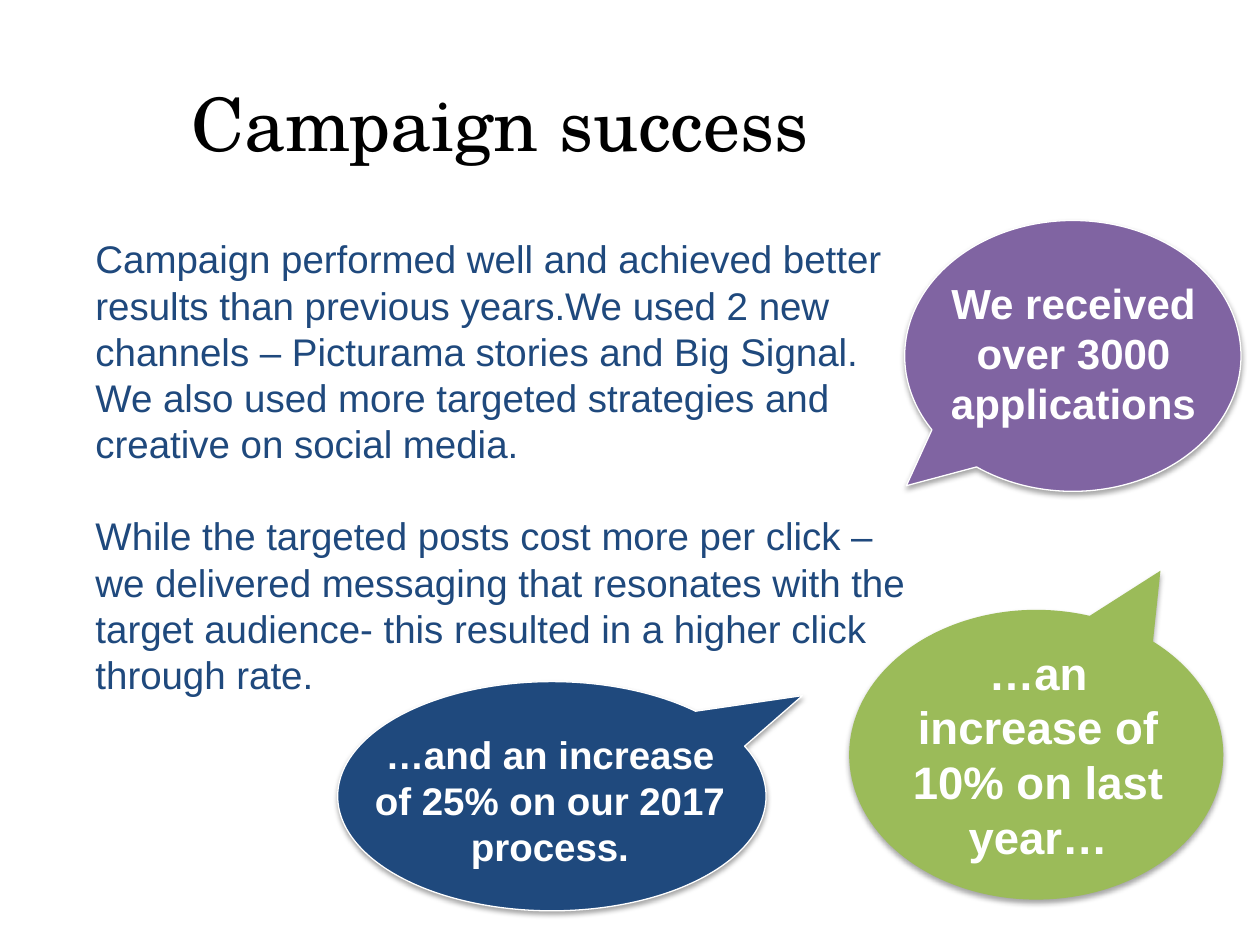
"""Build the campaign success slide."""
from lxml.etree import SubElement
from pptx import Presentation
from pptx.dml.color import RGBColor as RGB
from pptx.enum.shapes import MSO_SHAPE as Shape
from pptx.enum.text import PP_ALIGN as Align
from pptx.oxml.ns import qn
from pptx.util import Pt

NAVY = RGB(0x1F, 0x49, 0x7D)
PURPLE = RGB(0x80, 0x64, 0xA2)
GREEN = RGB(0x9B, 0xBB, 0x59)
WHITE = RGB(255, 255, 255)
BLACK = RGB(0, 0, 0)

TITLE = "Campaign success"
BODY = [
    ("Campaign performed well and achieved better results than previous "
     "years.We used 2 new channels – Picturama stories and Big Signal.", 0),
    ("We also used more targeted strategies and creative on social media.", 0),
    ("While the targeted posts cost more per click –", 26.4),
    ("we delivered messaging that resonates with the target audience- "
     "this resulted in a higher click through rate.", 0),
]
CALLS = [
    dict(box=(517, 126, 192.2, 154.8), tip=(-0.495, 0.479), fill=PURPLE,
         edge=WHITE, area=(528.5, 154.8, 169.9, 94.3), size=24,
         text="We received over 3000 applications"),
    dict(box=(485.3, 348.5, 213.8, 165.6), tip=(0.332, -0.635), fill=GREEN,
         edge=None, area=(508.3, 365, 169.9, 133.2), size=26,
         text="…an increase of 10% on last year…"),
    dict(box=(193, 389.5, 244.8, 131), tip=(0.585, -0.439), fill=NAVY,
         edge=WHITE, area=(204.5, 414, 219.6, 87.1), size=22,
         text="…and an increase of 25% on our 2017 process."),
]


def write(slide, area, paras, size, color, font="Arial", bold=False,
          align=Align.LEFT):
    frame = slide.shapes.add_textbox(*map(Pt, area)).text_frame
    frame.word_wrap = True
    for i, (text, gap) in enumerate(paras):
        para = frame.paragraphs[0] if i == 0 else frame.add_paragraph()
        para.alignment = align
        if gap:
            para.space_before = Pt(gap)
        run = para.add_run()
        run.text = text
        run.font.name, run.font.size = font, Pt(size)
        run.font.bold, run.font.color.rgb = bold, color


def shade(shape):
    shape.shadow.inherit = False
    effects = shape._element.spPr.find(qn("a:effectLst"))
    outer = SubElement(effects, qn("a:outerShdw"), blurRad=str(Pt(3.1)),
                       dist=str(Pt(1.8)), dir="5400000", rotWithShape="0")
    color = SubElement(outer, qn("a:srgbClr"), val=str(BLACK))
    SubElement(color, qn("a:alpha"), val="35000")


def bubble(slide, box, tip, fill, edge, area, size, text):
    shape = slide.shapes.add_shape(Shape.OVAL_CALLOUT, *map(Pt, box))
    shape.adjustments[0], shape.adjustments[1] = tip
    shape.fill.solid()
    shape.fill.fore_color.rgb = fill
    if edge is None:
        shape.line.fill.background()
    else:
        shape.line.color.rgb = edge
        shape.line.width = Pt(0.75)
    shade(shape)
    write(slide, area, [(text, 0)], size, WHITE, bold=True, align=Align.CENTER)


def main():
    deck = Presentation()
    deck.slide_width, deck.slide_height = Pt(720), Pt(540)
    slide = deck.slides.add_slide(deck.slide_layouts[6])
    write(slide, (47.5, 131, 496, 307.4), BODY, 22, NAVY)
    write(slide, (102.2, 41, 560.2, 90), [(TITLE, 0)], 42, BLACK,
          font="TeX Gyre Schola")
    for call in CALLS:
        bubble(slide, **call)
    deck.save("out.pptx")


if __name__ == "__main__":
    main()
